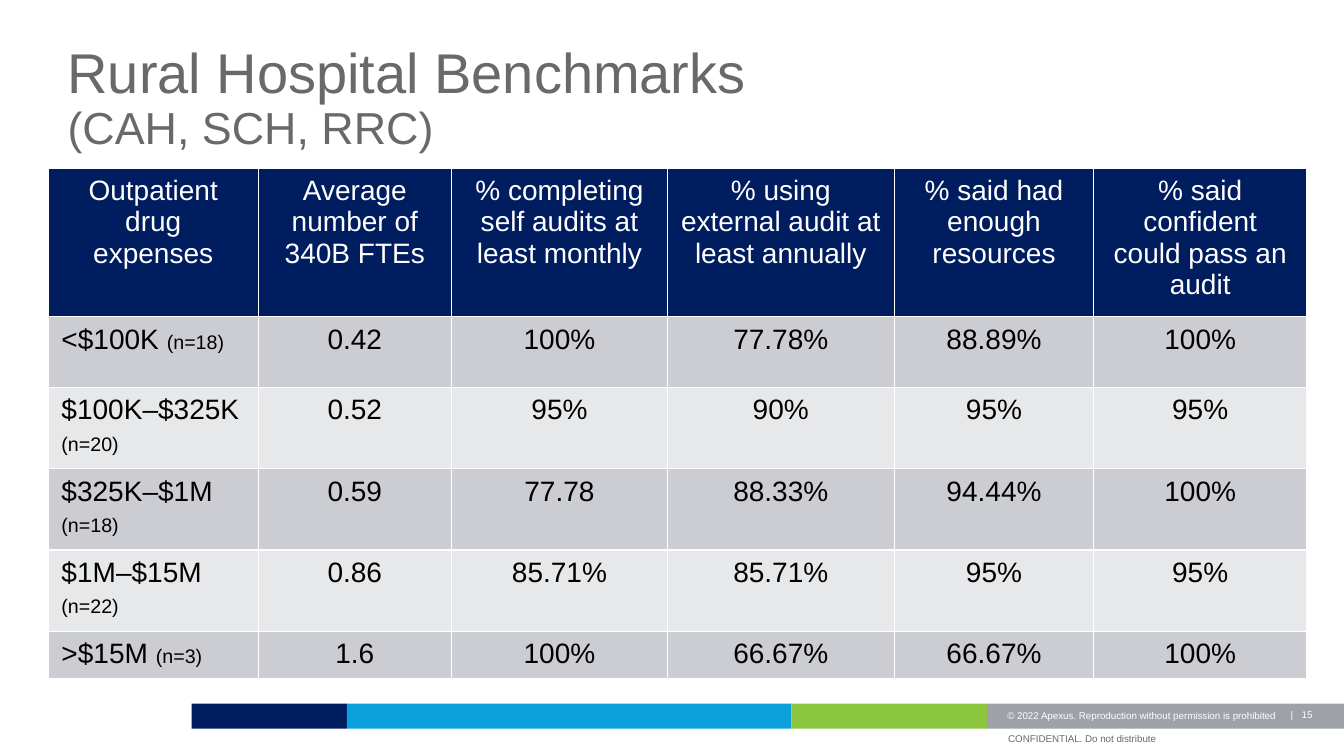
from dataclasses import dataclass

from lxml.etree import SubElement
from pptx import Presentation
from pptx.dml.color import RGBColor
from pptx.enum.shapes import MSO_SHAPE
from pptx.enum.text import MSO_ANCHOR, MSO_AUTO_SIZE, PP_ALIGN
from pptx.oxml.ns import qn
from pptx.util import Inches, Pt


@dataclass(frozen=True)
class Theme:
    font: str = "Arial"
    navy: str = "001D60"
    blue: str = "0CA0DB"
    green: str = "8CC63E"
    gray: str = "9EA1A8"
    text_gray: str = "696969"
    band_dark: str = "CCCDD2"
    band_light: str = "E7E8EA"
    white: str = "FFFFFF"
    black: str = "000000"
    title_size: int = 40
    subtitle_size: int = 32
    table_size: int = 20
    note_size: int = 14
    footer_size: int = 7


THEME = Theme()

HEADERS = [
    "Outpatient drug expenses",
    "Average number of 340B FTEs",
    "% completing self audits at least monthly",
    "% using external audit at least annually",
    "% said had enough resources",
    "% said confident could pass an audit",
]
BENCHMARKS = [
    ("<$100K", "(n=18)", "0.42", "100%", "77.78%", "88.89%", "100%"),
    ("$100K–$325K", "(n=20)", "0.52", "95%", "90%", "95%", "95%"),
    ("$325K–$1M", "(n=18)", "0.59", "77.78", "88.33%", "94.44%", "100%"),
    ("$1M–$15M", "(n=22)", "0.86", "85.71%", "85.71%", "95%", "95%"),
    (">$15M", "(n=3)", "1.6", "100%", "66.67%", "66.67%", "100%"),
]
COLUMN_WIDTHS = [2.08, 1.92, 2.14, 2.25, 1.98, 2.11]
ROW_HEIGHTS = [1.47, 0.7, 0.8, 0.8, 0.8, 0.47]


def style_font(font, size, color):
    font.name = THEME.font
    font.size = Pt(size)
    font.bold = False
    font.color.rgb = RGBColor.from_string(color)


def set_insets(target, horizontal, vertical):
    target.margin_left = target.margin_right = Inches(horizontal)
    target.margin_top = target.margin_bottom = Inches(vertical)


def add_title(page, left, top, width, height):
    title = page.shapes.title
    title.left, title.top = Inches(left), Inches(top)
    title.width, title.height = Inches(width), Inches(height)
    frame = title.text_frame
    frame.auto_size = MSO_AUTO_SIZE.NONE
    frame.word_wrap = True
    frame.vertical_anchor = MSO_ANCHOR.MIDDLE
    set_insets(frame, 0, 0)
    para = frame.paragraphs[0]
    para.alignment = PP_ALIGN.LEFT
    para.line_spacing = 0.9
    heading = para.add_run()
    heading.text = "Rural Hospital Benchmarks"
    style_font(heading.font, THEME.title_size, THEME.text_gray)
    para.add_line_break()
    subtitle = para.add_run()
    subtitle.text = "(CAH, SCH, RRC)"
    style_font(subtitle.font, THEME.subtitle_size, THEME.text_gray)


def style_cell(cell, fill):
    """Give the cell its insets, white borders and fill."""
    set_insets(cell, 0.13, 0.07)
    properties = cell._tc.get_or_add_tcPr()
    for side in ("lnL", "lnR", "lnT", "lnB"):
        border = SubElement(properties, qn(f"a:{side}"), w=str(Pt(1)))
        solid = SubElement(border, qn("a:solidFill"))
        SubElement(solid, qn("a:srgbClr"), val=THEME.white)
    cell.fill.solid()
    cell.fill.fore_color.rgb = RGBColor.from_string(fill)


def fill_cell(cell, text, fill, color):
    style_cell(cell, fill)
    para = cell.text_frame.paragraphs[0]
    para.alignment = PP_ALIGN.CENTER
    para.text = text
    style_font(para.font, THEME.table_size, color)


def fill_expense_cell(cell, expense, sample, fill):
    """Write the expense range with its sample size in smaller type."""
    style_cell(cell, fill)
    para = cell.text_frame.paragraphs[0]
    pieces = [(f"{expense} ", THEME.table_size), (sample, THEME.note_size)]
    if "–" in expense:  # the space keeps the wrapped line at full height
        pieces.append((" ", THEME.table_size))
    for text, size in pieces:
        span = para.add_run()
        span.text = text
        style_font(span.font, size, THEME.black)


def add_benchmark_table(page, left, top):
    frame = page.shapes.add_table(
        len(ROW_HEIGHTS), len(COLUMN_WIDTHS), Inches(left), Inches(top),
        Inches(sum(COLUMN_WIDTHS)), Inches(sum(ROW_HEIGHTS)))
    table = frame.table
    table.horz_banding = False
    for column, width in zip(table.columns, COLUMN_WIDTHS):
        column.width = Inches(width)
    for row, height in zip(table.rows, ROW_HEIGHTS):
        row.height = Inches(height)
    for column, header in enumerate(HEADERS):
        fill_cell(table.cell(0, column), header, THEME.navy, THEME.white)
    for row, (expense, sample, *values) in enumerate(BENCHMARKS, start=1):
        fill = THEME.band_dark if row % 2 else THEME.band_light
        fill_expense_cell(table.cell(row, 0), expense, sample, fill)
        for column, value in enumerate(values, start=1):
            fill_cell(table.cell(row, column), value, fill, THEME.black)


def add_footer_text(page, text, left, top, width, height, color):
    box = page.shapes.add_textbox(
        Inches(left), Inches(top), Inches(width), Inches(height))
    frame = box.text_frame
    frame.word_wrap = True
    frame.vertical_anchor = MSO_ANCHOR.BOTTOM
    set_insets(frame, 0, 0)
    para = frame.paragraphs[0]
    para.text = text
    style_font(para.font, THEME.footer_size, color)
    return para


def add_page_number(page, left, top, width, height):
    """Place the divider at the left of the box and the number at a tab."""
    para = add_footer_text(
        page, "|\t15", left, top, width, height, THEME.white)
    properties = para._p.get_or_add_pPr()
    tabs = properties.makeelement(qn("a:tabLst"))
    SubElement(tabs, qn("a:tab"), pos=str(Inches(0.11)), algn="l")
    properties.insert(0, tabs)


def add_footer(page, left, top, height):
    bands = [(1.54, THEME.navy), (4.41, THEME.blue),
             (1.94, THEME.green), (3.54, THEME.gray)]
    band_left = left
    for width, color in bands:
        band = page.shapes.add_shape(
            MSO_SHAPE.RECTANGLE, Inches(band_left), Inches(top),
            Inches(width), Inches(height))
        band.shadow.inherit = False
        band.fill.solid()
        band.fill.fore_color.rgb = RGBColor.from_string(color)
        band.line.fill.background()
        band_left += width
    add_footer_text(
        page, "© 2022 Apexus. Reproduction without permission is prohibited",
        left + 8.09, top + 0.02, 2.75, 0.16, THEME.white)
    add_page_number(page, left + 10.9, top + 0.01, 0.4, 0.16)
    add_footer_text(page, "CONFIDENTIAL. Do not distribute",
                    left + 8.1, top + 0.25, 3.33, 0.16, THEME.text_gray)


def main():
    deck = Presentation()
    deck.slide_width, deck.slide_height = Inches(13.33), Inches(7.5)
    page = deck.slides.add_slide(deck.slide_layouts[5])
    add_footer(page, 1.9, 6.98, 0.25)
    add_benchmark_table(page, 0.48, 1.67)
    add_title(page, 0.67, 0.35, 10.26, 1.27)
    deck.save("out.pptx")


if __name__ == "__main__":
    main()
